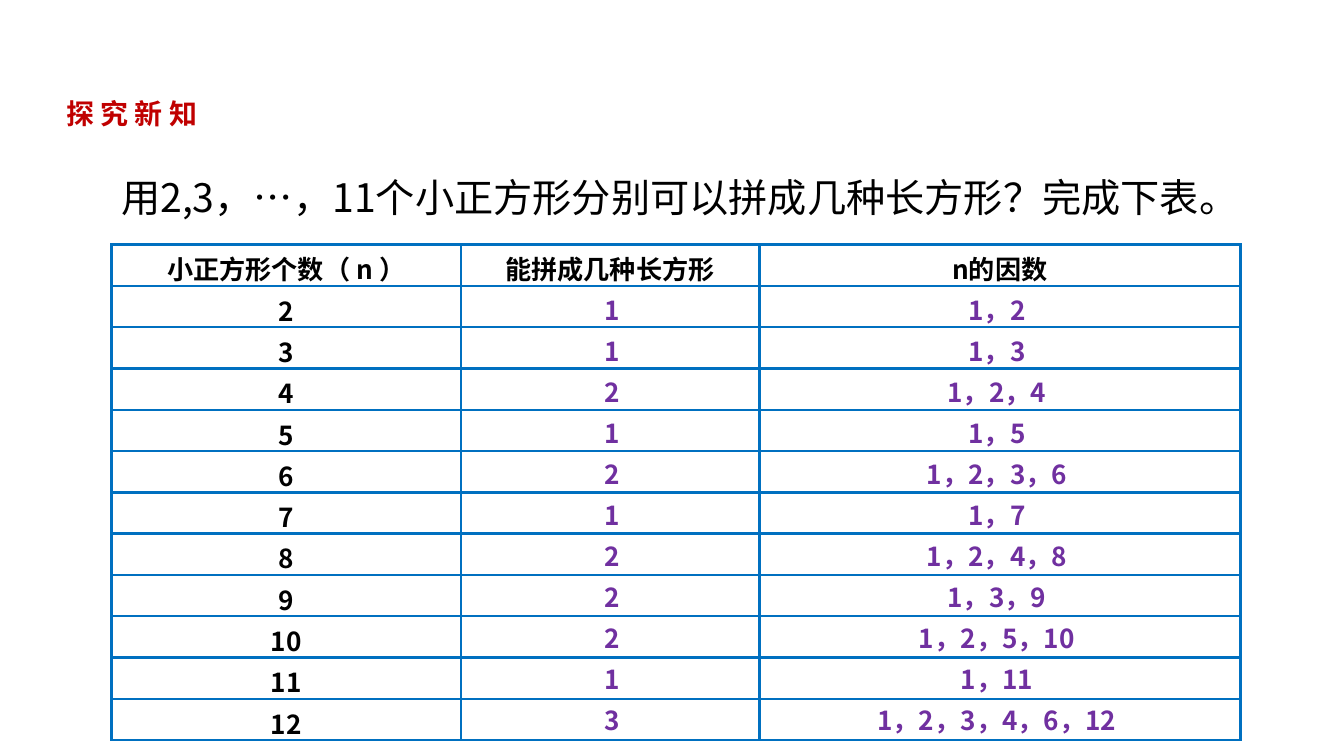
from lxml import etree
from pptx import Presentation
from pptx import util as u
from pptx.dml.color import RGBColor
from pptx.enum import text
from pptx.oxml import ns

FONT = "Noto Sans CJK SC"
COLORS = {"heading": "C00000", "body": "000000", "answer": "7030A0", "grid": "0070C0"}
PLAIN_STYLE = "{2D5ABB26-0587-4C30-8999-92F81FD0307C}"
HEADERS = ["小正方形个数（ n ）", "能拼成几种长方形", "n的因数"]
ROW_HEIGHT = u.Cm(0.78)


def format_text(paragraph, size, color, bold=False):
    for run in paragraph.runs:
        run.font.size = u.Pt(size)
        run.font.bold = bold
        run.font.name = FONT
        run.font.color.rgb = RGBColor.from_string(COLORS[color])
        east_asian = etree.SubElement(run.font._element, ns.qn("a:ea"))
        east_asian.set("typeface", FONT)


def set_frame(frame, wrap):
    frame.margin_left = frame.margin_right = u.Cm(0.18)
    frame.margin_top = frame.margin_bottom = u.Cm(0.09)
    frame.vertical_anchor = text.MSO_ANCHOR.TOP
    frame.word_wrap = wrap
    frame.auto_size = text.MSO_AUTO_SIZE.SHAPE_TO_FIT_TEXT


def add_heading(slide, wording):
    heading = slide.shapes.title
    heading.left, heading.top = u.Cm(0), u.Cm(1.73)
    heading.width, heading.height = u.Cm(4.11), u.Cm(0.84)
    set_frame(heading.text_frame, wrap=False)
    heading.text_frame.text = wording
    paragraph = heading.text_frame.paragraphs[0]
    paragraph.alignment = text.PP_ALIGN.LEFT
    paragraph._p.get_or_add_pPr().set("marL", str(u.Cm(0.95)))
    format_text(paragraph, 15, "heading", bold=True)


def add_question(slide, wording):
    question = slide.shapes.add_textbox(u.Cm(2.11), u.Cm(2.74), u.Cm(23.16), u.Cm(1.55))
    set_frame(question.text_frame, wrap=True)
    paragraph = question.text_frame.paragraphs[0]
    paragraph.text = wording
    paragraph.line_spacing = 1.5
    format_text(paragraph, 21, "body")


def add_borders(cell):
    properties = cell._tc.get_or_add_tcPr()
    for index, side in enumerate(("lnL", "lnR", "lnT", "lnB")):
        line = etree.Element(ns.qn(f"a:{side}"), w=str(u.Pt(1.5)))
        fill = etree.SubElement(line, ns.qn("a:solidFill"))
        etree.SubElement(fill, ns.qn("a:srgbClr"), val=COLORS["grid"])
        properties.insert(index, line)


def add_grid(slide, rows, left, top, widths, color, bordered=False):
    frame = slide.shapes.add_table(len(rows), len(widths), left, top,
                                   sum(widths), ROW_HEIGHT * len(rows))
    table = frame.table
    table._tbl.tblPr.find(ns.qn("a:tableStyleId")).text = PLAIN_STYLE
    table.first_row = table.horz_banding = False
    for column, width in zip(table.columns, widths):
        column.width = width
    for r, row in enumerate(rows):
        table.rows[r].height = ROW_HEIGHT
        for c, wording in enumerate(row):
            cell = table.cell(r, c)
            cell.fill.background()
            cell.vertical_anchor = text.MSO_ANCHOR.MIDDLE
            cell.margin_top = cell.margin_bottom = u.Cm(0.09)
            paragraph = cell.text_frame.paragraphs[0]
            paragraph.text = wording
            paragraph.alignment = text.PP_ALIGN.CENTER
            # Empty cells also need a small font so that rows stay low
            paragraph.font.size = u.Pt(14)
            format_text(paragraph, 14, color, bold=True)
            if bordered:
                add_borders(cell)


def main():
    deck = Presentation()
    deck.slide_width, deck.slide_height = u.Cm(25.4), u.Cm(14.28)
    slide = deck.slides.add_slide(deck.slide_layouts[5])

    # Heading and question
    add_heading(slide, " 探 究 新 知")
    add_question(slide, "用2,3，…，11个小正方形分别可以拼成几种长方形？完成下表。")

    # Ruled table with the numbers of squares
    numbers = range(2, 13)
    rows = [HEADERS] + [[str(n), "", ""] for n in numbers]
    add_grid(slide, rows, u.Cm(2.11), u.Cm(4.62),
             [u.Cm(6.6), u.Cm(5.64), u.Cm(9.09)], "body", bordered=True)

    # One answer strip per number: rectangles and factors
    for i, n in enumerate(numbers):
        factors = [d for d in range(1, n + 1) if n % d == 0]
        rectangles = (len(factors) + 1) // 2
        answer = [str(rectangles), "，".join(map(str, factors))]
        add_grid(slide, [answer], u.Cm(8.86), u.Cm(5.38 + 0.775 * i),
                 [u.Cm(5.41), u.Cm(9.14)], "answer")

    deck.save("out.pptx")


if __name__ == "__main__":
    main()
